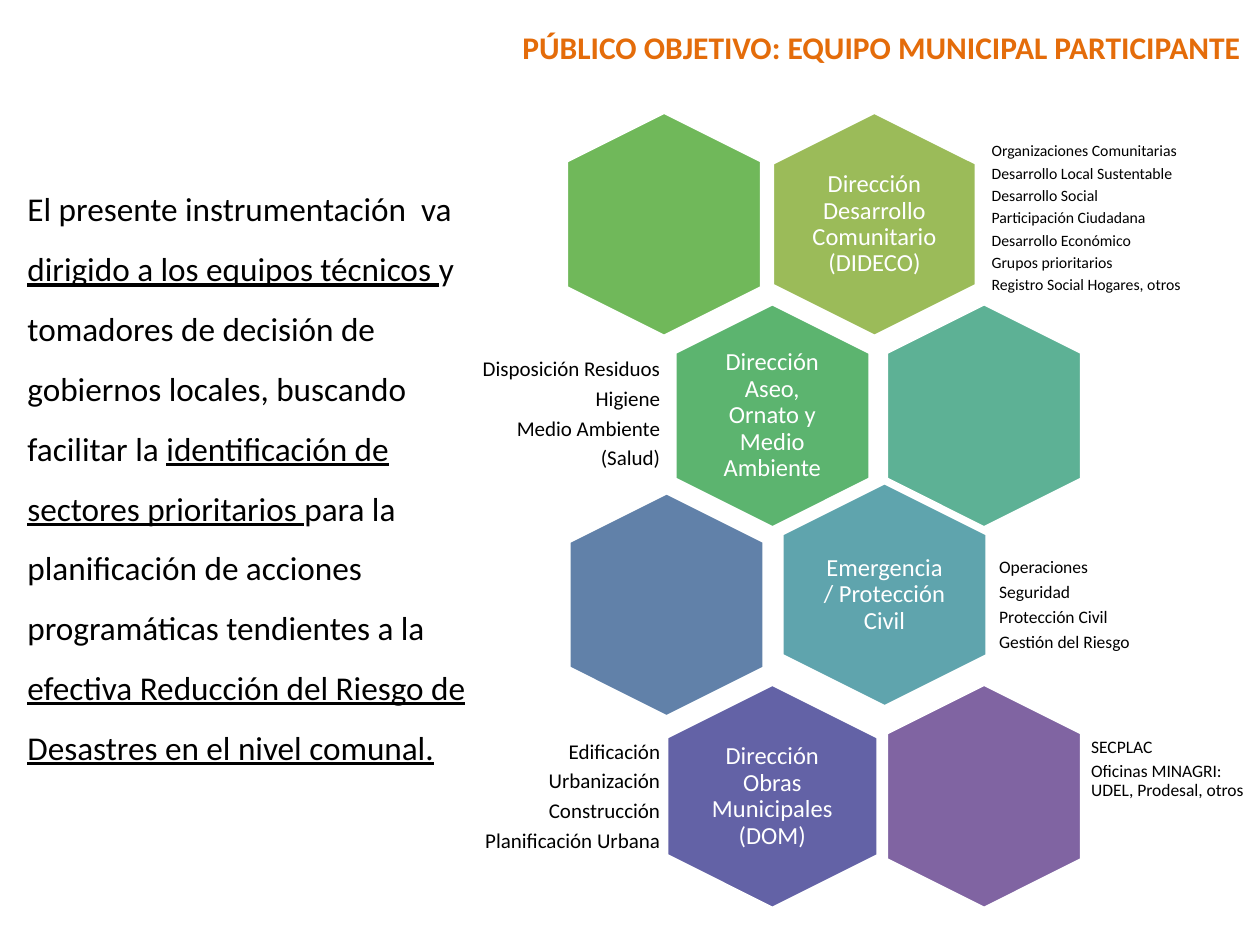
from typing import NamedTuple

from pptx import Presentation
from pptx.dml.color import RGBColor
from pptx.enum import shapes, text
from pptx.util import Inches, Pt

FONT = "Calibri"
LONG = 1.78  # hexagon height once turned
LEFT, MID, RIGHT = text.PP_ALIGN.LEFT, text.PP_ALIGN.CENTER, text.PP_ALIGN.RIGHT


class Cell(NamedTuple):
    x: float  # centre
    y: float
    fill: str
    wide: float = 1.55
    label: str = ""
    room: float = 1.11  # label width


class Notes(NamedTuple):
    left: float
    top: float
    width: float
    height: float
    size: int
    lines: tuple[str, ...]
    align: text.PP_ALIGN = LEFT
    inset: float = 0.04


CELLS = [
    Cell(6.94, 1.78, "9BBB59", 1.62, "Dirección Desarrollo Comunitario (DIDECO)"),
    Cell(5.27, 1.78, "70B85A"),
    Cell(6.13, 3.3, "5CB46F", 1.55, "Dirección Aseo, Ornato y Medio Ambiente", 1.07),
    Cell(7.81, 3.3, "5DB195"),
    Cell(7.02, 4.72, "5FA4AD", 1.63, "Emergencia/ Protección Civil"),
    Cell(5.29, 4.8, "6181A9"),
    Cell(6.13, 6.32, "6362A6", 1.68, "Dirección Obras Municipales (DOM)", 1.13),
    Cell(7.81, 6.32, "8064A2"),
]

NOTES = [
    Notes(7.83, 1.06, 2.1, 1.35, 9, (
        "Organizaciones Comunitarias", "Desarrollo Local Sustentable",
        "Desarrollo Social", "Participación Ciudadana", "Desarrollo Económico",
        "Grupos prioritarios", "Registro Social Hogares, otros")),
    Notes(3.36, 2.62, 1.93, 1.34, 12, (
        "Disposición Residuos", "Higiene", "Medio Ambiente", "(Salud)"), RIGHT, 0.05),
    Notes(7.89, 4.27, 1.99, 1.07, 10, (
        "Operaciones", "Seguridad", "Protección Civil", "Gestión del Riesgo")),
    Notes(3.36, 5.79, 1.93, 1.07, 12, (
        "Edificación", "Urbanización", "Construcción", "Planificación Urbana"),
        RIGHT, 0.05),
    Notes(8.62, 5.64, 1.38, 0.93, 10, (
        "SECPLAC", "Oficinas MINAGRI: UDEL, Prodesal, otros")),
]

# (words, underlined)
INTRO = [
    ("El presente instrumentación  va ", False),
    ("dirigido a los equipos técnicos ", True),
    ("y tomadores de decisión de gobiernos locales, buscando facilitar la ", False),
    ("identificación de sectores prioritarios ", True),
    ("para la planificación de acciones programáticas tendientes a la ", False),
    ("efectiva Reducción del Riesgo de Desastres en el nivel comunal.", True),
]


def rgb(code: str) -> RGBColor:
    return RGBColor.from_string(code)


def style(font, size: float, color: str, bold: bool = False) -> None:
    font.name, font.size, font.bold = FONT, Pt(size), bold
    font.color.rgb = rgb(color)


def add_box(slide, left: float, top: float, width: float, height: float):
    box = slide.shapes.add_textbox(
        Inches(left), Inches(top), Inches(width), Inches(height))
    box.text_frame.word_wrap = True
    return box.text_frame


def add_notes(slide, note: Notes, color: str = "000000") -> None:
    frame = add_box(slide, note.left, note.top, note.width, note.height)
    frame.vertical_anchor = text.MSO_ANCHOR.MIDDLE
    frame.margin_left = frame.margin_right = Inches(note.inset)
    frame.margin_top = frame.margin_bottom = Inches(note.inset)
    frame.text = "\n".join(note.lines)
    for par in frame.paragraphs:
        par.alignment = note.align
        par.line_spacing = 0.9
        par.space_after = Pt(round(note.size * 0.33, 1))
        for run in par.runs:
            style(run.font, note.size, color)


def add_cell(slide, cell: Cell) -> None:
    hexa = slide.shapes.add_shape(
        shapes.MSO_SHAPE.HEXAGON, Inches(cell.x - LONG / 2),
        Inches(cell.y - cell.wide / 2), Inches(LONG), Inches(cell.wide))
    hexa.rotation = 90
    hexa.adjustments[0] = 0.25
    hexa.shadow.inherit = False
    hexa.fill.solid()
    hexa.fill.fore_color.rgb = rgb(cell.fill)
    hexa.line.color.rgb = rgb("FFFFFF")
    hexa.line.width = Pt(2)
    if cell.label:
        tall = 1.22
        add_notes(slide, Notes(
            cell.x - cell.room / 2, cell.y - tall / 2, cell.room, tall, 14,
            (cell.label,), MID, 0.06), "FFFFFF")


def add_title(slide) -> None:
    frame = add_box(slide, 1.58, 0.17, 8.42, 0.4)
    frame.text = "PÚBLICO OBJETIVO: EQUIPO MUNICIPAL PARTICIPANTE "
    par = frame.paragraphs[0]
    par.alignment = RIGHT
    style(par.runs[0].font, 18, "E46C0A", True)


def add_intro(slide) -> None:
    par = add_box(slide, 0.12, 1.29, 3.86, 4.9).paragraphs[0]
    par.line_spacing = 1.5
    for words, under in INTRO:
        run = par.add_run()
        run.text = words
        style(run.font, 19, "000000")
        run.font.underline = under


def main() -> None:
    deck = Presentation()
    deck.slide_width, deck.slide_height = Inches(10), Inches(7.5)
    slide = deck.slides.add_slide(deck.slide_layouts[6])
    add_title(slide)
    add_intro(slide)
    for cell in CELLS:
        add_cell(slide, cell)
    for note in NOTES:
        add_notes(slide, note)
    deck.save("out.pptx")


if __name__ == "__main__":
    main()
